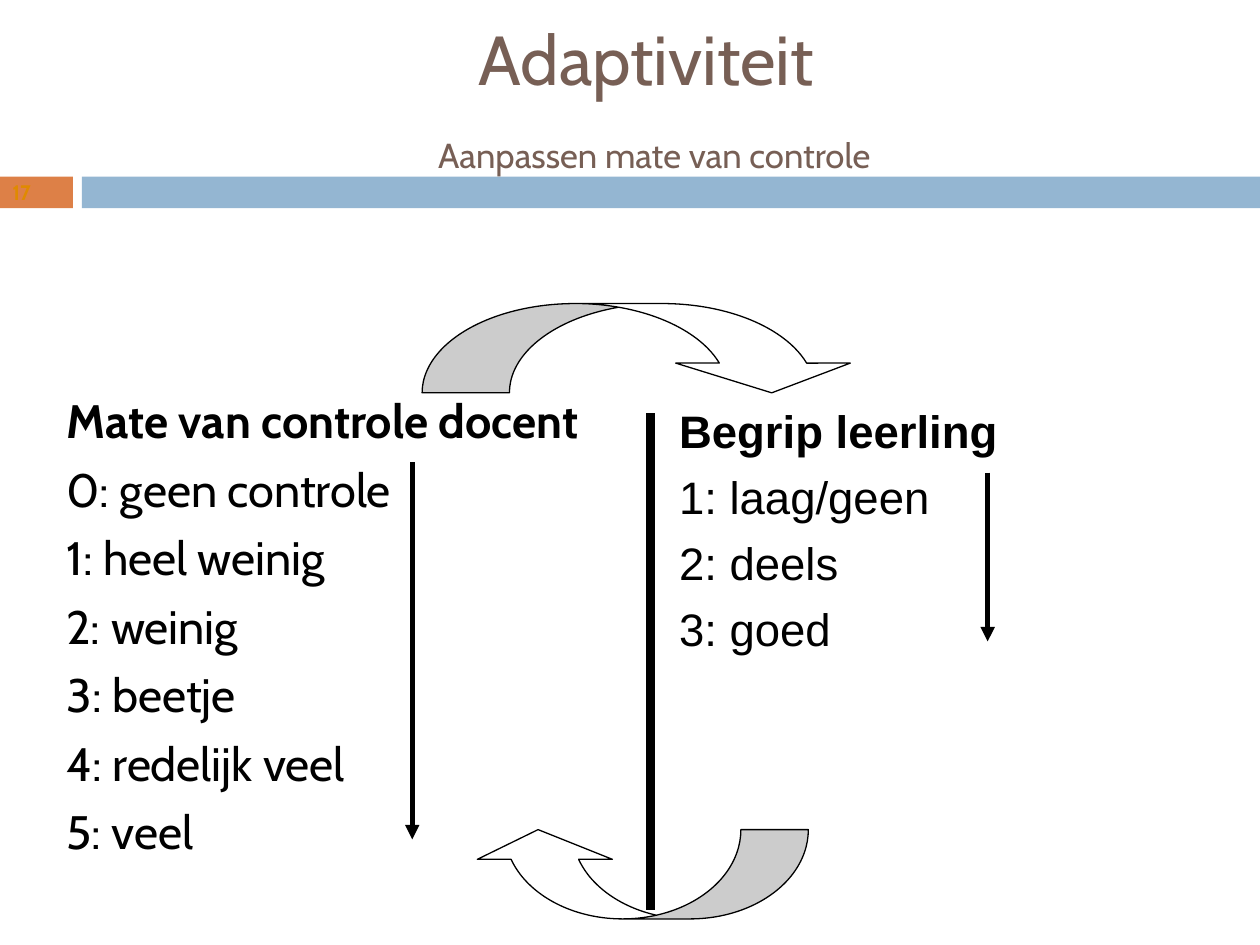
from lxml.etree import SubElement
from pptx import Presentation
from pptx.dml.color import RGBColor
from pptx.enum.shapes import MSO_CONNECTOR as Connector, MSO_SHAPE as Shape
from pptx.enum.text import MSO_ANCHOR as Anchor, PP_ALIGN as Align
from pptx.oxml.ns import qn
from pptx.util import Cm, Pt

BLACK = RGBColor(0x00, 0x00, 0x00)
WHITE = RGBColor(0xFF, 0xFF, 0xFF)
BROWN = RGBColor(0x77, 0x5F, 0x55)
ORANGE = RGBColor(0xDD, 0x80, 0x47)
BLUE = RGBColor(0x94, 0xB6, 0xD2)
AMBER = RGBColor(0xE0, 0x8A, 0x00)

TITLE = "Adaptiviteit"
SUBTITLE = "Aanpassen mate van controle"
PAGE_NUMBER = "17"

# Boxes are left, top, width, height in cm.
BANDS = [((0, 3.56, 1.47, 0.64), ORANGE), ((1.65, 3.56, 23.75, 0.64), BLUE)]
SCALES = [
    dict(box=(1.09, 7.77, 11.2, 9.32), font="Cabin", size=26.8, before=7,
         indent=0.89, inset=(0.25, 0.13), heading="Mate van controle docent",
         levels=["0: geen controle", "1: heel weinig", "2: weinig",
                 "3: beetje", "4: redelijk veel", "5: veel"]),
    dict(box=(13.69, 8.13, 11.2, 5.79), font="Arial", size=26, before=6.4,
         indent=0.97, inset=(0, 0), heading="Begrip leerling",
         levels=["1: laag/geen", "2: deels", "3: goed"]),
]
# x, top, bottom in cm, width in points, arrowhead
VERTICALS = [
    (19.91, 9.53, 12.93, 2.75, True),
    (8.31, 9.32, 16.92, 2.75, True),
    (13.11, 8.33, 18.34, 4.75, False),
]
CYCLE_ARROWS = [
    (Shape.CURVED_DOWN_ARROW, (8.51, 6.12, 8.81, 1.8), 0, (0.978, 1.957, 0.333)),
    (Shape.CURVED_LEFT_ARROW, (11.99, 14.22, 1.8, 6.81), 90, (0.756, 1.513, 0.333)),
]


def to_cm(box):
    return [Cm(value) for value in box]


def add_text_frame(slide, box, inset=(0.25, 0.13), anchor=Anchor.TOP):
    frame = slide.shapes.add_textbox(*to_cm(box)).text_frame
    frame.word_wrap = True
    frame.vertical_anchor = anchor
    frame.margin_left = frame.margin_right = Cm(inset[0])
    frame.margin_top = frame.margin_bottom = Cm(inset[1])
    return frame


def add_run(paragraph, text, font, size, color, bold=False):
    run = paragraph.add_run()
    run.text = text
    run.font.name = font
    run.font.size = Pt(size)
    run.font.color.rgb = color
    run.font.bold = bold


def add_shape(slide, kind, box, fill):
    shape = slide.shapes.add_shape(kind, *to_cm(box))
    shape.shadow.inherit = False
    shape.fill.solid()
    shape.fill.fore_color.rgb = fill
    shape.line.fill.background()
    return shape


def add_title(slide):
    frame = add_text_frame(slide, (1.7, 0.64, 22.66, 2.74), anchor=Anchor.MIDDLE)
    paragraph = frame.paragraphs[0]
    paragraph.alignment = Align.CENTER
    add_run(paragraph, TITLE, "Cabin", 39.6, BROWN)
    paragraph.add_line_break()
    # The large space gives the subtitle line its full height.
    add_run(paragraph, " ", "Cabin", 39.6, BROWN)
    add_run(paragraph, SUBTITLE, "Cabin", 19.8, BROWN)


def add_scale(slide, scale):
    """Add a bold heading with its levels below, on a hanging indent."""
    frame = add_text_frame(slide, scale["box"], scale["inset"])
    for index, text in enumerate([scale["heading"], *scale["levels"]]):
        paragraph = frame.add_paragraph() if index else frame.paragraphs[0]
        properties = paragraph._p.get_or_add_pPr()
        properties.set("marL", str(Cm(scale["indent"])))
        properties.set("indent", str(-Cm(scale["indent"])))
        paragraph.space_before = Pt(scale["before"] if index else 0)
        add_run(paragraph, text, scale["font"], scale["size"], BLACK, bold=index == 0)


def add_vertical(slide, x, top, bottom, width, has_head):
    connector = slide.shapes.add_connector(
        Connector.STRAIGHT, Cm(x), Cm(top), Cm(x), Cm(bottom))
    connector.line.color.rgb = BLACK
    connector.line.width = Pt(width)
    if has_head:
        SubElement(connector.line._get_or_add_ln(), qn("a:tailEnd"), type="triangle")
    SubElement(connector._element.spPr, qn("a:effectLst"))


def main():
    presentation = Presentation()
    presentation.slide_width, presentation.slide_height = Cm(25.4), Cm(19.05)
    slide = presentation.slides.add_slide(presentation.slide_layouts[6])

    for box, color in BANDS:
        add_shape(slide, Shape.RECTANGLE, box, color)
    number_frame = add_text_frame(slide, BANDS[0][0], (0.25, 0), Anchor.MIDDLE)
    add_run(number_frame.paragraphs[0], PAGE_NUMBER, "Cabin", 12, AMBER, bold=True)
    add_title(slide)

    for scale in SCALES:
        add_scale(slide, scale)
    for vertical in VERTICALS:
        add_vertical(slide, *vertical)
    for kind, box, rotation, adjustments in CYCLE_ARROWS:
        arrow = add_shape(slide, kind, box, WHITE)
        arrow.line.color.rgb = BLACK
        arrow.line.width = Pt(0.75)
        arrow.rotation = rotation
        for index, value in enumerate(adjustments):
            arrow.adjustments[index] = value

    presentation.save("out.pptx")


if __name__ == "__main__":
    main()
